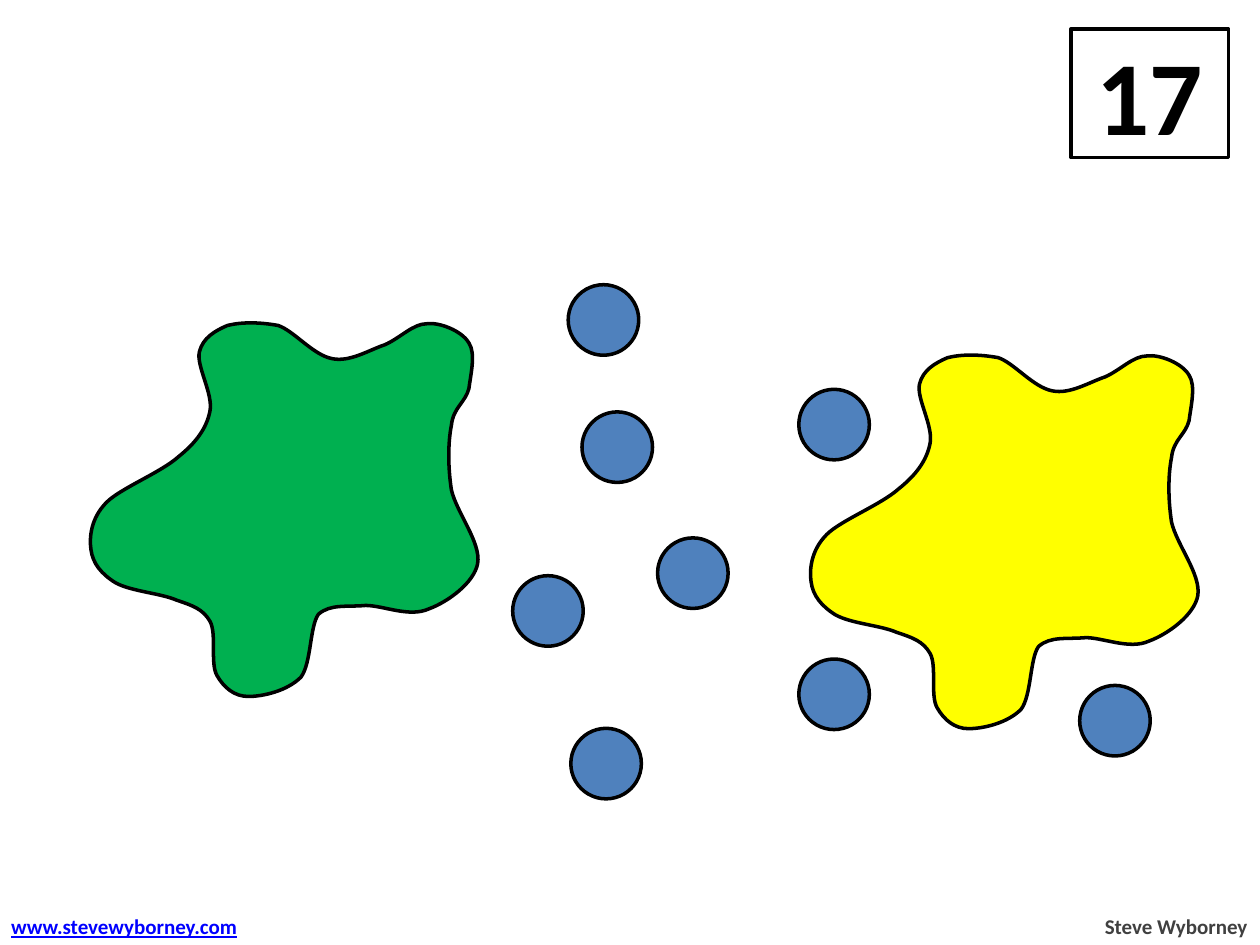
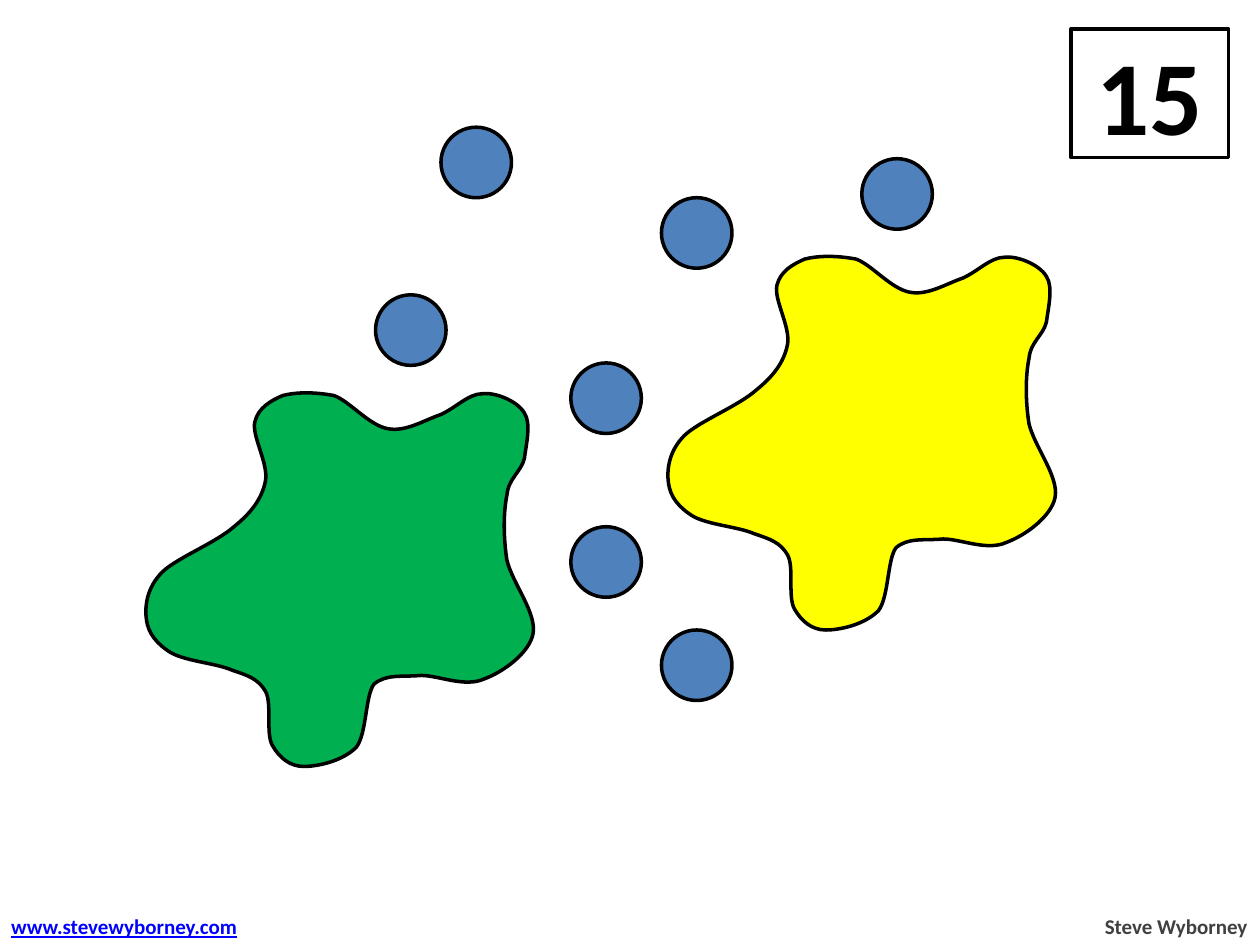
from lxml import etree
from pptx import Presentation
from pptx.dml.color import RGBColor
from pptx.enum.shapes import MSO_SHAPE as Preset
from pptx.enum.text import MSO_ANCHOR as Anchor, PP_ALIGN as Align
from pptx.oxml.ns import qn
from pptx.util import Pt

COLORS = {
    "ink": "000000",
    "paper": "FFFFFF",
    "dot": "4F81BD",
    "green": "00B050",
    "yellow": "FFFF00",
    "credit": "404040",
    "address": "0000FF",
}
DOT_SIZE = 40.3

# Start of the blob, then two handles and an end point for each curve.
BLOB_START = (14, 148)
BLOB_POINTS = [
    (6, 143), (1, 137), (0, 129),
    (-1, 122), (0, 111), (9, 102),
    (17, 94), (40, 85), (50, 76),
    (60, 68), (66, 60), (68, 50),
    (70, 40), (60, 24), (62, 16),
    (64, 8), (71, 4), (78, 1),
    (86, -1), (96, -1), (107, 1),
    (116, 4), (127, 18), (138, 20),
    (148, 22), (159, 15), (168, 12),
    (177, 8), (184, 0), (192, 0),
    (199, -1), (212, 4), (216, 11),
    (220, 17), (217, 29), (216, 37),
    (214, 45), (207, 48), (206, 58),
    (204, 68), (204, 82), (206, 95),
    (209, 108), (223, 125), (221, 137),
    (219, 148), (204, 159), (193, 163),
    (182, 168), (167, 161), (157, 161),
    (146, 162), (137, 160), (130, 166),
    (125, 173), (126, 194), (120, 202),
    (112, 210), (98, 213), (90, 213),
    (82, 213), (76, 208), (72, 201),
    (68, 194), (72, 177), (68, 170),
    (64, 163), (58, 161), (49, 158),
    (40, 154), (23, 153), BLOB_START,
]

# Dots are given by their left and top, blobs by colour, left and top.
PUZZLES = [
    {
        "total": "17",
        "dots": [(324.7, 162.7), (332.6, 235.4), (456.5, 222.5), (375.8, 307.4),
                 (293, 329), (456.5, 376.6), (617, 391.7), (326.2, 416.2)],
        "blobs": [("green", 52, 185), ("yellow", 463.5, 203.4)],
    },
    {
        "total": "15",
        "dots": [(252, 72.7), (214.6, 168.5), (378, 113), (492.5, 90.7),
                 (326.2, 207.4), (326.2, 301), (378, 360)],
        "blobs": [("green", 83.7, 225), ("yellow", 382, 147)],
    },
]


def write(shape, text, size=12, color="ink", align=Align.LEFT, underline=False):
    frame = shape.text_frame
    frame.word_wrap = False
    para = frame.paragraphs[0]
    para.alignment = align
    span = para.add_run()
    span.text = text
    span.font.name = "Calibri"
    span.font.size = Pt(size)
    span.font.bold = True
    span.font.underline = underline
    span.font.color.rgb = RGBColor.from_string(COLORS[color])


def paint(shape, color):
    shape.shadow.inherit = False
    shape.fill.solid()
    shape.fill.fore_color.rgb = RGBColor.from_string(COLORS[color])
    shape.line.color.rgb = RGBColor.from_string(COLORS["ink"])
    shape.line.width = Pt(2)


deck = Presentation()
deck.slide_width, deck.slide_height = Pt(720), Pt(540)

for puzzle in PUZZLES:
    page = deck.slides.add_slide(deck.slide_layouts[6])
    shapes = page.shapes

    total = shapes.add_shape(Preset.RECTANGLE, Pt(612), Pt(16.5), Pt(90), Pt(73.5))
    paint(total, "paper")
    total.text_frame.vertical_anchor = Anchor.MIDDLE
    write(total, puzzle["total"], size=60, align=Align.CENTER)

    credit = shapes.add_textbox(Pt(623.5), Pt(518.4), Pt(96.5), Pt(21.6))
    write(credit, "Steve Wyborney", color="credit", align=Align.RIGHT)
    address = shapes.add_textbox(Pt(-0.7), Pt(518.4), Pt(147.6), Pt(21.6))
    write(address, "www.stevewyborney.com", color="address", underline=True)

    for left, top in puzzle["dots"]:
        dot = shapes.add_shape(Preset.OVAL, Pt(left), Pt(top), Pt(DOT_SIZE), Pt(DOT_SIZE))
        paint(dot, "dot")

    for color, left, top in puzzle["blobs"]:
        builder = shapes.build_freeform(*BLOB_START, scale=Pt(1))
        builder.add_line_segments(BLOB_POINTS, close=True)
        blob = builder.convert_to_shape(Pt(left), Pt(top))
        paint(blob, color)

        # Turn every three straight segments into one Bezier curve.
        segments = list(blob.element.iter(qn("a:lnTo")))
        for first in range(0, len(segments), 3):
            curve = etree.Element(qn("a:cubicBezTo"))
            segments[first].addprevious(curve)
            for segment in segments[first:first + 3]:
                curve.append(segment[0])
                segment.getparent().remove(segment)

deck.save("out.pptx")
